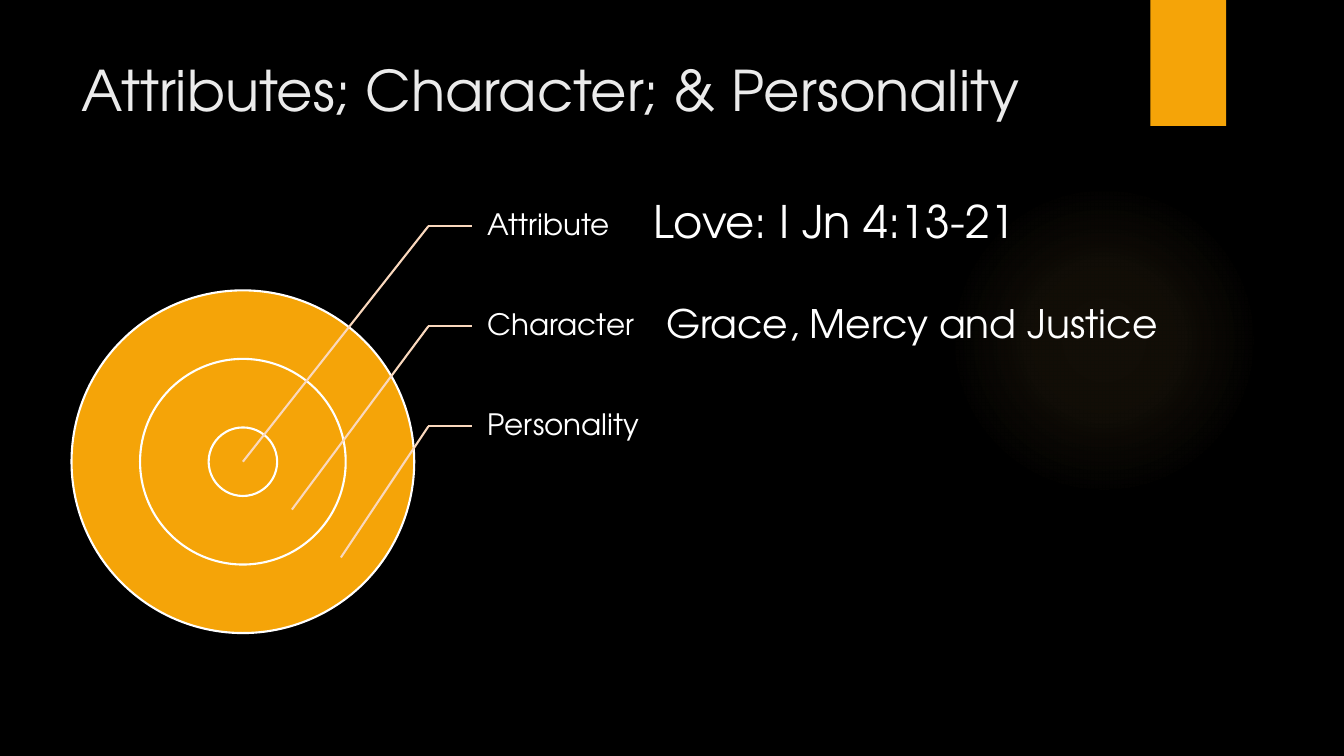
from dataclasses import dataclass

from lxml.etree import SubElement
from pptx import Presentation
from pptx.dml.color import RGBColor
from pptx.enum.shapes import MSO_CONNECTOR, MSO_SHAPE
from pptx.enum.text import MSO_ANCHOR, MSO_AUTO_SIZE, PP_ALIGN
from pptx.oxml import parse_xml
from pptx.oxml.ns import nsdecls, qn
from pptx.util import Pt


@dataclass(frozen=True)
class Theme:
    font: str = "TeX Gyre Adventor"
    background: str = "000000"
    accent: str = "F5A408"
    glow: str = "FAC96A"
    leader: str = "FAD8BD"
    title: str = "EBEBEB"
    text: str = "FFFFFF"
    title_size: float = 40
    love_size: float = 32
    grace_size: float = 28
    label_size: float = 21
    line_width: float = 1.5


THEME = Theme()
CENTER_X, CENTER_Y = 173.5, 329.8
RING_UNIT = 24.48
LABELS = ("Attribute", "Character", "Personality")
LABEL_LEFT, LABEL_TOP, LABEL_PITCH = 337, 125.8, 71.5
ELBOW_X = 306
TARGET_STEP_X, TARGET_STEP_Y = 35, 34.2


def color(value):
    return RGBColor.from_string(value)


def write(frame, text, size, fill=THEME.text):
    frame.word_wrap = True
    frame.auto_size = MSO_AUTO_SIZE.NONE
    paragraph = frame.paragraphs[0]
    paragraph.alignment = PP_ALIGN.LEFT
    run = paragraph.add_run()
    run.text = text
    run.font.name = THEME.font
    run.font.size = Pt(size)
    run.font.color.rgb = color(fill)
    return paragraph


def add_title(slide, text):
    title = slide.shapes.title
    title.left, title.top, title.width, title.height = Pt(51), Pt(36), Pt(741), Pt(79)
    title.text_frame.vertical_anchor = MSO_ANCHOR.TOP
    write(title.text_frame, text, THEME.title_size, THEME.title)


def add_filled(slide, kind, left, top, width, height):
    shape = slide.shapes.add_shape(kind, Pt(left), Pt(top), Pt(width), Pt(height))
    shape.shadow.inherit = False
    shape.fill.solid()
    shape.fill.fore_color.rgb = color(THEME.accent)
    shape.line.fill.background()
    return shape


def add_glow(slide):
    """Add the faint round light, fading out from its middle."""
    glow = add_filled(slide, MSO_SHAPE.OVAL, 677.5, 131.8, 221.8, 221.8)
    stops = "".join(
        f'<a:gs pos="{position * 1000}"><a:srgbClr val="{THEME.glow}">'
        f'<a:alpha val="{opacity * 1000}"/></a:srgbClr></a:gs>'
        for position, opacity in ((0, 7), (36, 6), (69, 0))
    )
    gradient = parse_xml(
        f'<a:gradFill {nsdecls("a")} rotWithShape="1"><a:gsLst>{stops}</a:gsLst>'
        '<a:path path="circle">'
        '<a:fillToRect l="50000" t="50000" r="50000" b="50000"/>'
        "</a:path></a:gradFill>"
    )
    properties = glow.element.spPr
    properties.replace(properties.find(qn("a:solidFill")), gradient)


def add_ring(slide, radius):
    ring = add_filled(slide, MSO_SHAPE.OVAL, CENTER_X - radius, CENTER_Y - radius,
                      2 * radius, 2 * radius)
    ring.line.color.rgb = color(THEME.text)
    ring.line.width = Pt(THEME.line_width)


def add_leader(slide, start, end):
    leader = slide.shapes.add_connector(
        MSO_CONNECTOR.STRAIGHT, *(Pt(value) for value in (*start, *end)))
    leader.line.color.rgb = color(THEME.leader)
    leader.line.width = Pt(THEME.line_width)
    SubElement(leader.element.spPr, qn("a:effectLst"))


def add_text(slide, text, size, left, top, width, height):
    box = slide.shapes.add_textbox(Pt(left), Pt(top), Pt(width), Pt(height))
    return box.text_frame, write(box.text_frame, text, size)


def add_label(slide, index, text):
    """Add a ring's label and the bent line leading to that ring."""
    top = LABEL_TOP + index * LABEL_PITCH
    frame, paragraph = add_text(slide, text, THEME.label_size,
                                LABEL_LEFT, top, 122.4, LABEL_PITCH)
    frame.vertical_anchor = MSO_ANCHOR.MIDDLE
    frame.margin_left = Pt(11.5)
    frame.margin_top = frame.margin_right = frame.margin_bottom = Pt(2)
    paragraph.line_spacing = 0.9

    elbow = (ELBOW_X, top + LABEL_PITCH / 2)
    target = (CENTER_X + index * TARGET_STEP_X, CENTER_Y + index * TARGET_STEP_Y)
    add_leader(slide, elbow, (LABEL_LEFT, elbow[1]))
    add_leader(slide, elbow, target)


def main():
    presentation = Presentation()
    presentation.slide_width, presentation.slide_height = Pt(960), Pt(540)
    slide = presentation.slides.add_slide(presentation.slide_layouts[5])
    slide.background.fill.solid()
    slide.background.fill.fore_color.rgb = color(THEME.background)

    add_glow(slide)
    add_filled(slide, MSO_SHAPE.RECTANGLE, 821.8, 0, 54, 90)
    add_title(slide, "Attributes; Character; & Personality")
    for units in (5, 3, 1):
        add_ring(slide, units * RING_UNIT)
    for index, text in enumerate(LABELS):
        add_label(slide, index, text)
    add_text(slide, "Love: I Jn 4:13-21", THEME.love_size, 459.4, 134.6, 419, 46)
    add_text(slide, "Grace, Mercy and Justice", THEME.grace_size, 468.7, 210.2, 440.6, 41)
    presentation.save("out.pptx")


if __name__ == "__main__":
    main()
